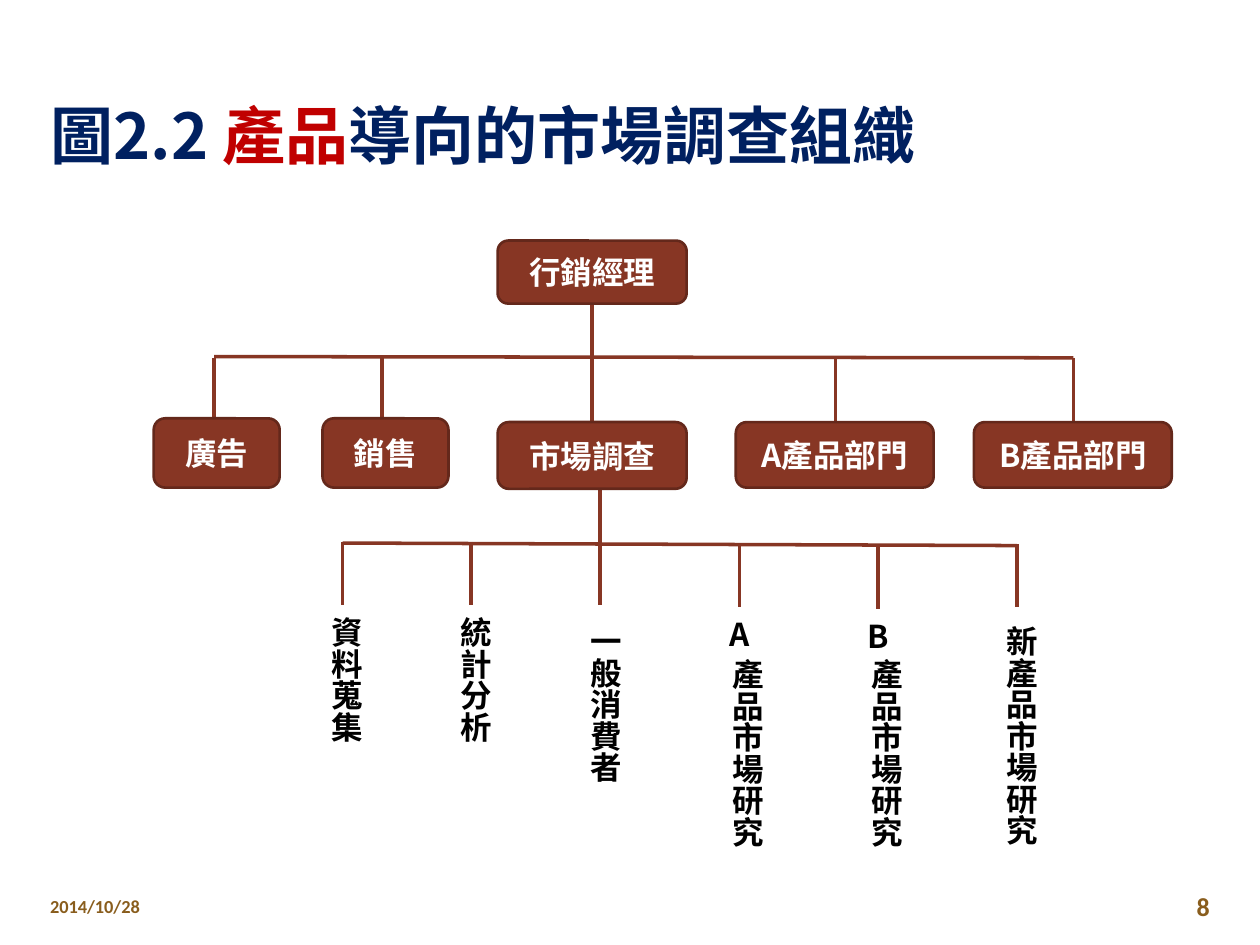
from lxml import etree
from pptx import Presentation
from pptx.dml.color import RGBColor
from pptx.enum import shapes, text
from pptx.oxml.ns import qn
from pptx.util import Inches, Pt

CJK = "Noto Sans CJK SC"
BROWN = "873624"


def style(run, size, color, font=CJK):
    run.font.size = Pt(size)
    run.font.bold = True
    run.font.color.rgb = RGBColor.from_string(color)
    run.font.name = font
    etree.SubElement(run.font._element, qn("a:ea")).set("typeface", font)


def rule(x1, y1, x2, y2):
    """Draw one straight brown line of the chart."""
    line = slide.shapes.add_connector(
        shapes.MSO_CONNECTOR.STRAIGHT, Inches(x1), Inches(y1), Inches(x2), Inches(y2))
    line.line.color.rgb = RGBColor.from_string(BROWN)
    line.line.width = Pt(2)
    etree.SubElement(line._element.spPr, qn("a:effectLst"))


prs = Presentation()
prs.slide_width, prs.slide_height = Inches(10), Inches(7.5)
slide = prs.slides.add_slide(prs.slide_layouts[5])

# Title
title = slide.shapes.title
title.left, title.top, title.width, title.height = map(Inches, (0.3, 0.25, 9.4, 1.17))
frame = title.text_frame
frame.vertical_anchor = text.MSO_ANCHOR.BOTTOM
frame.auto_size = text.MSO_AUTO_SIZE.NONE
para = frame.paragraphs[0]
para.alignment = text.PP_ALIGN.LEFT
para.space_before = Pt(4)
for words, color in [("圖2.2 ", "002060"), ("產品", "C00000"), ("導向的市場調查組織", "002060")]:
    run = para.add_run()
    run.text = words
    style(run, 36, color)

# Date and page number
for words, x, width, size, align in [
    ("2014/10/28", 0.3, 2.33, 10.5, text.PP_ALIGN.LEFT),
    ("8", 8.74, 0.96, 14.8, text.PP_ALIGN.RIGHT),
]:
    box = slide.shapes.add_textbox(Inches(x), Inches(7.03), Inches(width), Inches(0.32))
    frame = box.text_frame
    frame.word_wrap = True
    frame.vertical_anchor = text.MSO_ANCHOR.MIDDLE
    frame.text = words
    frame.paragraphs[0].alignment = align
    style(frame.paragraphs[0].runs[0], size, "895D1D", "Calibri")

# Connecting lines: trunk, bar and drops of each level
rule(4.7, 2.41, 4.7, 3.35)
rule(1.7, 2.83, 8.52, 2.84)
for x, end in [(1.7, 3.32), (3.03, 3.32), (6.63, 3.35), (8.52, 3.35)]:
    rule(x, 2.84, x, end)

rule(4.76, 3.86, 4.76, 4.8)
rule(2.72, 4.31, 8.07, 4.33)
for x, top in [(2.72, 4.3), (3.74, 4.3), (5.87, 4.32), (6.97, 4.33), (8.07, 4.32)]:
    rule(x, top, x, top + 0.5)

# Manager and departments
for words, x, y, width, height in [
    ("行銷經理", 3.95, 1.91, 1.5, 0.5),
    ("廣告", 1.22, 3.32, 1, 0.55),
    ("銷售", 2.56, 3.32, 1, 0.55),
    ("市場調查", 3.95, 3.35, 1.5, 0.53),
    ("A產品部門", 5.84, 3.35, 1.57, 0.52),
    ("B產品部門", 7.73, 3.35, 1.57, 0.52),
]:
    box = slide.shapes.add_shape(
        shapes.MSO_SHAPE.ROUNDED_RECTANGLE,
        Inches(x), Inches(y), Inches(width), Inches(height))
    box.shadow.inherit = False
    box.fill.solid()
    box.fill.fore_color.rgb = RGBColor.from_string(BROWN)
    box.line.color.rgb = RGBColor.from_string("64281B")
    box.line.width = Pt(1.5)
    frame = box.text_frame
    frame.vertical_anchor = text.MSO_ANCHOR.MIDDLE
    frame.text = words
    frame.paragraphs[0].alignment = text.PP_ALIGN.CENTER
    style(frame.paragraphs[0].runs[0], 18, "FFFFFF")

# Research tasks, written downwards except for the product letters
for words, x, y, width, height in [
    ("資料蒐集", 2.45, 4.8, 0.5, 1.11),
    ("統計分析", 3.47, 4.8, 0.5, 1.11),
    ("一般消費者", 4.5, 4.87, 0.5, 1.36),
    ("產品市場研究", 5.63, 5.13, 0.5, 1.62),
    ("產品市場研究", 6.73, 5.13, 0.5, 1.62),
    ("新產品市場研究", 7.8, 4.87, 0.5, 1.87),
    ("A", 5.69, 4.83, 0.38, 0.4),
    ("B", 6.79, 4.85, 0.36, 0.4),
]:
    box = slide.shapes.add_textbox(Inches(x), Inches(y), Inches(width), Inches(height))
    frame = box.text_frame
    frame.word_wrap = False
    frame.auto_size = text.MSO_AUTO_SIZE.SHAPE_TO_FIT_TEXT
    frame.text = words
    if len(words) > 1:
        frame._txBody.bodyPr.set("vert", "eaVert")
    style(frame.paragraphs[0].runs[0], 18, "000000")

prs.save("out.pptx")
